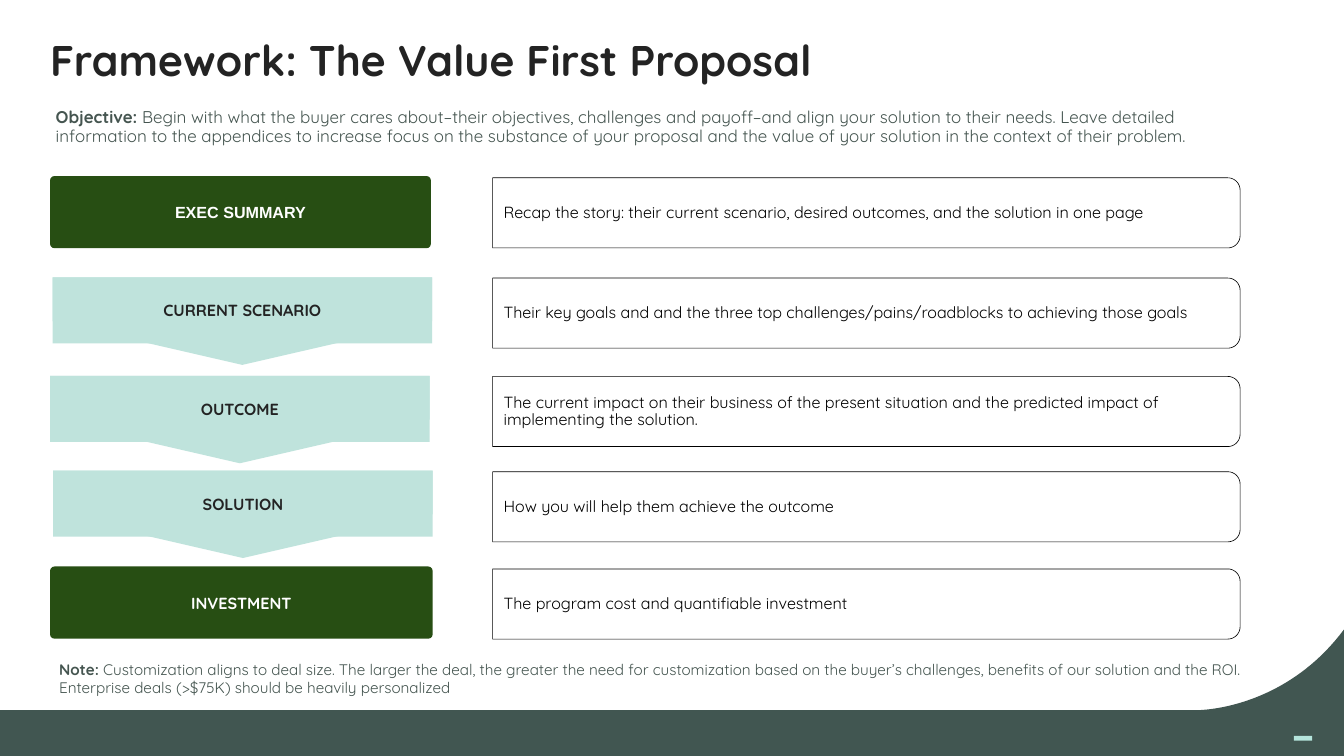
from math import cos, pi, sin

from pptx import Presentation
from pptx.dml.color import RGBColor
from pptx.enum.shapes import MSO_SHAPE
from pptx.enum.text import MSO_ANCHOR, MSO_AUTO_SIZE, PP_ALIGN
from pptx.util import Pt

RECTANGLE, ROUNDED = MSO_SHAPE.RECTANGLE, MSO_SHAPE.ROUNDED_RECTANGLE
PENTAGON = MSO_SHAPE.PENTAGON
TOP, MIDDLE = MSO_ANCHOR.TOP, MSO_ANCHOR.MIDDLE
LEFT, CENTER = PP_ALIGN.LEFT, PP_ALIGN.CENTER
NO_AUTOFIT = MSO_AUTO_SIZE.NONE

WHITE = RGBColor(0xFF, 0xFF, 0xFF)
BLACK = RGBColor(0x00, 0x00, 0x00)
INK = RGBColor(0x23, 0x23, 0x23)
SLATE = RGBColor(0x45, 0x55, 0x50)
BAND = RGBColor(0x41, 0x56, 0x51)
AQUA = RGBColor(0xB5, 0xE5, 0xDC)
MINT = RGBColor(0xBF, 0xE3, 0xDC)
FOREST = RGBColor(0x27, 0x4E, 0x13)

FONT = "Quicksand"
SLIDE_W, SLIDE_H = 1583.28, 890.64


def paint(shape, fill, line=None):
    shape.shadow.inherit = False
    shape.fill.solid()
    shape.fill.fore_color.rgb = fill
    if line is None:
        shape.line.fill.background()
    else:
        shape.line.color.rgb = line
        shape.line.width = Pt(0.75)


def write(frame, holder, parts, color, insets, size, name=FONT,
          anchor=TOP, align=LEFT, spacing=1.0):
    """Write (text, bold) parts as one paragraph; holder owns the margins."""
    left, top, right, bottom = insets
    layout = {
        "margin_left": Pt(left), "margin_top": Pt(top),
        "margin_right": Pt(right), "margin_bottom": Pt(bottom),
        "vertical_anchor": anchor,
    }
    for attribute, value in layout.items():
        setattr(holder, attribute, value)
    frame.word_wrap = True
    paragraph = frame.paragraphs[0]
    paragraph.alignment = align
    paragraph.line_spacing = spacing
    for text, bold in parts:
        run = paragraph.add_run()
        run.text = text
        for attribute, value in {"name": name, "size": Pt(size), "bold": bold}.items():
            setattr(run.font, attribute, value)
        run.font.color.rgb = color


prs = Presentation()
prs.slide_width, prs.slide_height = Pt(SLIDE_W), Pt(SLIDE_H)
slide = prs.slides.add_slide(prs.slide_layouts[5])
shapes = slide.shapes

# Footer band, rising in a curve at the right edge
BAND_TOP, CURVE_START, CURVE_TOP = 836.64, 1410.5, 741.6
CURVE_STEPS = 40
curve = []
for step in range(1, CURVE_STEPS + 1):
    t = step / CURVE_STEPS
    start, pull, end = (1 - t) ** 3 + 3 * t * (1 - t) ** 2, 3 * t * t * (1 - t), t ** 3
    curve.append((Pt(start * CURVE_START + pull * 1512 + end * SLIDE_W),
                  Pt(start * BAND_TOP + pull * 837.4 + end * CURVE_TOP)))
outline = shapes.build_freeform(Pt(0), Pt(SLIDE_H), scale=1.0)
outline.add_line_segments(
    [(Pt(0), Pt(BAND_TOP)), (Pt(CURVE_START), Pt(BAND_TOP))] + curve
    + [(Pt(SLIDE_W), Pt(SLIDE_H))])
paint(outline.convert_to_shape(), BAND)
footer_mark = shapes.add_shape(RECTANGLE, Pt(1524.2), Pt(866.9), Pt(21.6), Pt(5.8))
paint(footer_mark, AQUA)

# Heading
title = shapes.title
title.left, title.top, title.width, title.height = Pt(59), Pt(46), Pt(1464.5), Pt(55.4)
title.text_frame.auto_size = NO_AUTOFIT
write(title.text_frame, title.text_frame,
      [("Framework: The Value First Proposal", True)], INK, (0, 0, 0, 0), 50.5,
      spacing=0.9)

objective = shapes.add_table(1, 1, Pt(59.8), Pt(121.7), Pt(1414), Pt(54.7)).table
objective.first_row = objective.horz_banding = False
objective_cell = objective.cell(0, 0)
objective_cell.fill.background()
write(objective_cell.text_frame, objective_cell, [
    ("Objective:", True),
    (" Begin with what the buyer cares about–their objectives, challenges and "
     "payoff–and align your solution to their needs. Leave detailed information "
     "to the appendices to increase focus on the substance of your proposal and "
     "the value of your solution in the context of their problem.", False),
], SLATE, (5.8, 5.8, 5.8, 5.8), 20, spacing=0.9)

# Proposal stages: label, font, is arrow, left, top, width, detail top, detail
STAGES = [
    ("EXEC SUMMARY", "Arial", False, 59, 207.4, 448.6, 209.5,
     "Recap the story: their current scenario, desired outcomes, and the "
     "solution in one page"),
    ("CURRENT SCENARIO", FONT, True, 61.9, 326.9, 447.1, 327.6,
     "Their key goals and and the three top challenges/pains/roadblocks to "
     "achieving those goals"),
    ("OUTCOME", FONT, True, 59, 442.8, 447.1, 443.5,
     "The current impact on their business of the present situation and the "
     "predicted impact of implementing the solution."),
    ("SOLUTION", FONT, True, 62.6, 554.4, 447.1, 555.8,
     "How you will help them achieve the outcome"),
    ("INVESTMENT", FONT, False, 59, 667.4, 450.7, 670.3,
     "The program cost and quantifiable investment"),
]
BAR_H, STEP_H, ARROW_H = 85, 77.8, 103
DETAIL_LEFT, DETAIL_RIGHT, DETAIL_H, RADIUS = 580.3, 1460.9, 82.6, 14.5
CORNER_STEPS = 12

for label, font, is_arrow, left, top, width, detail_top, detail in STAGES:
    if is_arrow:
        # Quarter turn about the centre makes the pentagon point down
        pointer = shapes.add_shape(
            PENTAGON, Pt(left + (width - ARROW_H) / 2),
            Pt(top + (ARROW_H - width) / 2), Pt(ARROW_H), Pt(width))
        pointer.rotation = 90
        paint(pointer, MINT)
        stage = shapes.add_shape(RECTANGLE, Pt(left), Pt(top), Pt(width), Pt(STEP_H))
        paint(stage, MINT)
    else:
        stage = shapes.add_shape(ROUNDED, Pt(left), Pt(top), Pt(width), Pt(BAR_H))
        stage.adjustments[0] = 0.06
        paint(stage, FOREST)
    write(stage.text_frame, stage.text_frame, [(label, True)],
          INK if is_arrow else WHITE, (11.5, 5.8, 11.5, 5.8), 19, font,
          anchor=MIDDLE, align=CENTER)

    detail_bottom = detail_top + DETAIL_H
    corners = []
    for center_y, first_angle in ((detail_top + RADIUS, -pi / 2),
                                  (detail_bottom - RADIUS, 0)):
        for step in range(CORNER_STEPS + 1):
            angle = first_angle + step * pi / 2 / CORNER_STEPS
            corners.append((Pt(DETAIL_RIGHT - RADIUS + RADIUS * cos(angle)),
                            Pt(center_y + RADIUS * sin(angle))))
    outline = shapes.build_freeform(Pt(DETAIL_LEFT), Pt(detail_top), scale=1.0)
    outline.add_line_segments(corners + [(Pt(DETAIL_LEFT), Pt(detail_bottom))])
    detail_box = outline.convert_to_shape()
    paint(detail_box, WHITE, BLACK)
    write(detail_box.text_frame, detail_box.text_frame, [(detail, False)], BLACK,
          (13, 6.5, 6.5, 6.5), 19, anchor=MIDDLE, spacing=0.9)

note = shapes.add_textbox(Pt(62.6), Pt(770.4), Pt(1408.3), Pt(58.3))
write(note.text_frame, note.text_frame, [
    ("Note:", True),
    (" Customization aligns to deal size. The larger the deal, the greater the "
     "need for customization based on the buyer’s challenges, benefits of our "
     "solution and the ROI. Enterprise deals (>$75K) should be heavily "
     "personalized", False),
], SLATE, (7.2, 7.2, 7.2, 7.2), 18)

prs.save("out.pptx")
